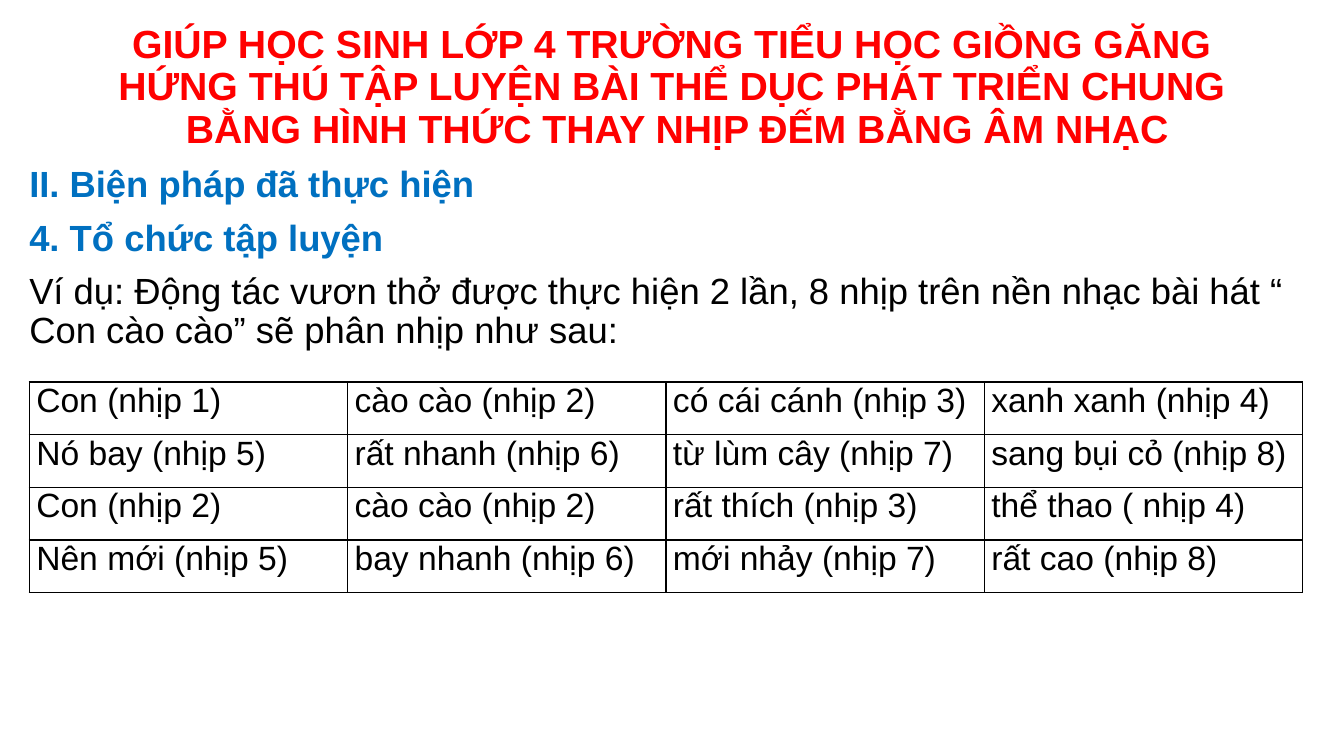
from lxml.etree import SubElement
from pptx import Presentation
from pptx.dml.color import RGBColor
from pptx.enum.text import MSO_ANCHOR, MSO_AUTO_SIZE, PP_ALIGN
from pptx.oxml.ns import qn
from pptx.util import Inches, Pt

RED = RGBColor(0xFF, 0x00, 0x00)
BLUE = RGBColor(0x00, 0x70, 0xC0)
BLACK = RGBColor(0x00, 0x00, 0x00)

TITLE = (
    "GIÚP HỌC SINH LỚP 4 TRƯỜNG TIỂU HỌC GIỒNG GĂNG \v"
    "HỨNG THÚ TẬP LUYỆN BÀI THỂ DỤC PHÁT TRIỂN CHUNG \v"
    "BẰNG HÌNH THỨC THAY NHỊP ĐẾM BẰNG ÂM NHẠC"
)
HEADINGS = ["II. Biện pháp đã thực hiện", "4. Tổ chức tập luyện"]
EXAMPLE = (
    "Ví dụ: Động tác vươn thở được thực hiện 2 lần, 8 nhịp trên nền nhạc "
    "bài hát “ Con cào cào” sẽ phân nhịp như sau:"
)
BEATS = [
    ["Con (nhịp 1)", "cào cào (nhịp 2)", "có cái cánh (nhịp 3)", "xanh xanh (nhịp 4)"],
    ["Nó bay (nhịp 5)", "rất nhanh (nhịp 6)", "từ lùm cây (nhịp 7)", "sang bụi cỏ (nhịp 8)"],
    ["Con (nhịp 2)", "cào cào (nhịp 2)", "rất thích (nhịp 3)", "thể thao ( nhịp 4)"],
    ["Nên mới (nhịp 5)", "bay nhanh (nhịp 6)", "mới nhảy (nhịp 7)", "rất cao (nhịp 8)"],
]


def place(shape, box):
    shape.left, shape.top, shape.width, shape.height = (Inches(n) for n in box)


def set_font(paragraph, size, color, bold=False):
    font = paragraph.font
    font.name, font.size, font.bold = "Arial", Pt(size), bold
    font.color.rgb = color


def remove_bullet(paragraph):
    properties = paragraph._p.get_or_add_pPr()
    properties.set("marL", "0")
    properties.set("indent", "0")
    SubElement(properties, qn("a:buNone"))


def fill_title(title, box):
    place(title, box)
    frame = title.text_frame
    frame.auto_size = MSO_AUTO_SIZE.NONE
    frame.vertical_anchor = MSO_ANCHOR.MIDDLE
    heading = frame.paragraphs[0]
    heading.text = TITLE
    heading.alignment = PP_ALIGN.CENTER
    heading.line_spacing = 0.9
    set_font(heading, 28, RED, bold=True)


def fill_body(body, box):
    place(body, box)
    frame = body.text_frame
    frame.text = "\n".join(HEADINGS + [EXAMPLE])
    frame.auto_size = MSO_AUTO_SIZE.NONE
    for paragraph in frame.paragraphs:
        is_heading = paragraph.text in HEADINGS
        remove_bullet(paragraph)
        paragraph.alignment = PP_ALIGN.JUSTIFY if is_heading else PP_ALIGN.LEFT
        paragraph.line_spacing = 0.9
        paragraph.space_before = Pt(10)
        set_font(paragraph, 26, BLUE if is_heading else BLACK, bold=is_heading)


def add_borders(cell):
    properties = cell._tc.get_or_add_tcPr()
    for side in ("a:lnL", "a:lnR", "a:lnT", "a:lnB"):
        line = SubElement(properties, qn(side), w=str(Pt(1)))
        fill = SubElement(line, qn("a:solidFill"))
        SubElement(fill, qn("a:srgbClr"), val=str(BLACK))


def fill_cell(cell, text):
    cell.margin_left = cell.margin_right = Inches(0.07)
    cell.margin_top = cell.margin_bottom = 0
    add_borders(cell)
    cell.fill.background()
    beat = cell.text_frame.paragraphs[0]
    beat.text = text
    beat.alignment = PP_ALIGN.JUSTIFY
    beat.space_before = beat.space_after = Pt(6)
    set_font(beat, 24, BLACK)


def add_beat_table(slide, box):
    lengths = [Inches(n) for n in box]
    table = slide.shapes.add_table(len(BEATS), len(BEATS[0]), *lengths).table
    table.first_row = table.horz_banding = False
    for r, row in enumerate(BEATS):
        for c, text in enumerate(row):
            fill_cell(table.cell(r, c), text)


def main():
    deck = Presentation()
    deck.slide_width, deck.slide_height = Inches(13.33), Inches(7.5)
    slide = deck.slides.add_slide(deck.slide_layouts[1])
    fill_title(slide.shapes.title, (0.29, 0.07, 12.85, 1.61))
    fill_body(slide.placeholders[1], (0.19, 1.6, 12.95, 5.82))
    add_beat_table(slide, (0.29, 3.79, 12.63, 2.09))
    deck.save("out.pptx")


if __name__ == "__main__":
    main()
